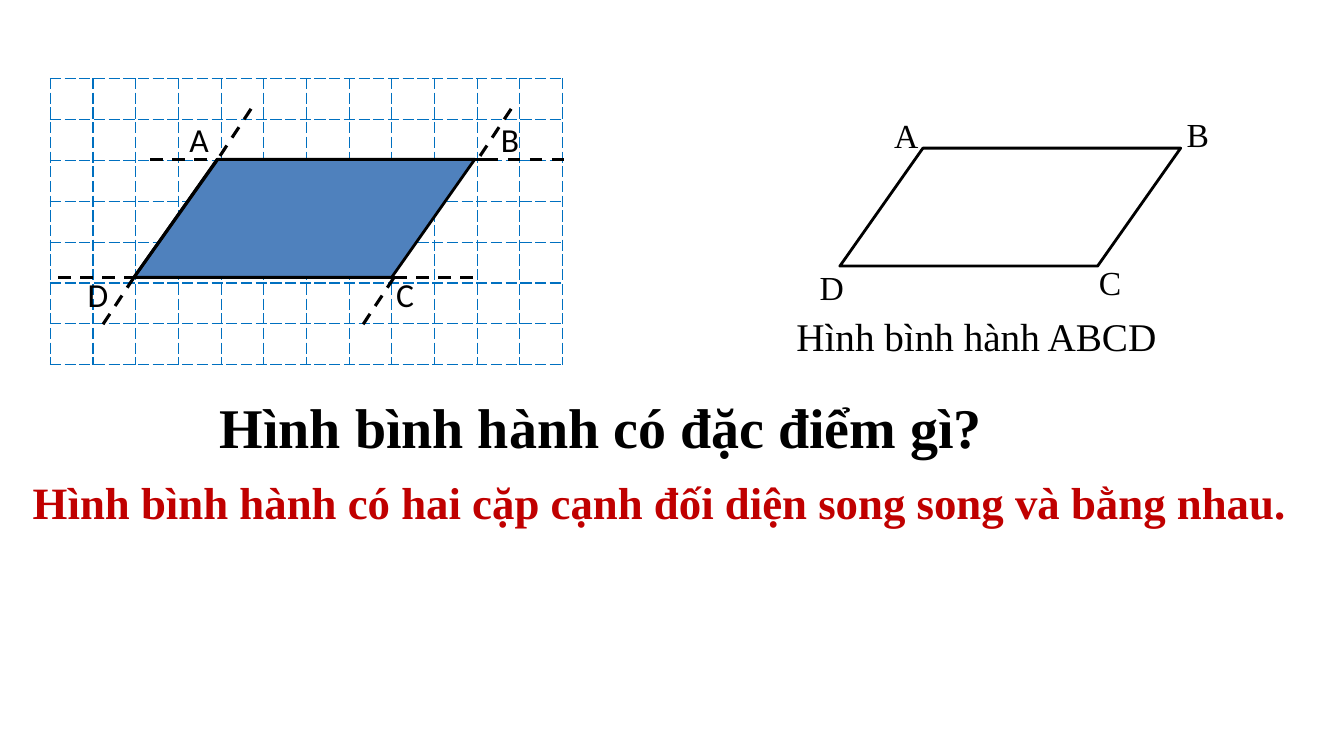
from lxml import etree
from pptx import Presentation
from pptx.dml.color import RGBColor
from pptx.enum.dml import MSO_LINE
from pptx.enum.shapes import MSO_CONNECTOR, MSO_SHAPE
from pptx.enum.text import MSO_ANCHOR, PP_ALIGN
from pptx.oxml.ns import qn
from pptx.util import Inches, Pt

DASH = MSO_LINE.DASH
STRAIGHT = MSO_CONNECTOR.STRAIGHT
PARALLELOGRAM = MSO_SHAPE.PARALLELOGRAM
TOP = MSO_ANCHOR.TOP
LEFT, CENTER = PP_ALIGN.LEFT, PP_ALIGN.CENTER
TITLE_ONLY = 5
COLORS = {"ink": "000000", "paper": "FFFFFF", "grid": "0070C0",
          "figure": "4F81BD", "answer": "C00000"}
SERIF, SANS = "Times New Roman", "Calibri"
COLUMNS, ROWS = 12, 7
SIDE_WIDTH, SIDE_HEIGHT, SKEW = 3.38, 1.17, 0.83


def write(box, text, size, font=SERIF, color="ink", bold=False, align=LEFT):
    frame = box.text_frame
    frame.word_wrap = True
    frame.vertical_anchor = TOP
    frame.text = text
    para = frame.paragraphs[0]
    para.alignment = align
    para.line_spacing = 1.0
    para.space_before = Pt(0)
    para.font.size = Pt(size)
    para.font.name = font
    para.font.bold = bold
    para.font.color.rgb = RGBColor.from_string(COLORS[color])


def draw_line(start, end, dashed):
    points = [Inches(value) for value in (*start, *end)]
    line = page.shapes.add_connector(STRAIGHT, *points)
    line.line.color.rgb = RGBColor.from_string(COLORS["ink"])
    line.line.width = Pt(2.25)
    if dashed:
        line.line.dash_style = DASH
    etree.SubElement(line._element.spPr, qn("a:effectLst"))


deck = Presentation()
deck.slide_width, deck.slide_height = Inches(13.33), Inches(7.5)
page = deck.slides.add_slide(deck.slide_layouts[TITLE_ONLY])

grid = page.shapes.add_table(ROWS, COLUMNS, Inches(0.5), Inches(0.78),
                             Inches(5.08), Inches(2.8)).table
grid.first_row = grid.horz_banding = False
for cell in grid.iter_cells():
    properties = cell._tc.get_or_add_tcPr()
    for side in ("lnL", "lnR", "lnT", "lnB"):
        border = etree.SubElement(properties, qn(f"a:{side}"), w=str(Pt(1)))
        paint = etree.SubElement(border, qn("a:solidFill"))
        etree.SubElement(paint, qn("a:srgbClr"), val=COLORS["grid"])
        etree.SubElement(border, qn("a:prstDash"), val="sysDash")
    cell.fill.solid()
    cell.fill.fore_color.rgb = RGBColor.from_string(COLORS["paper"])

for left, top, fill in ((1.33, 1.58, "figure"), (8.33, 1.47, None)):
    figure = page.shapes.add_shape(PARALLELOGRAM, Inches(left), Inches(top),
                                   Inches(SIDE_WIDTH), Inches(SIDE_HEIGHT))
    figure.adjustments[0] = 0.704
    figure.shadow.inherit = False
    figure.line.color.rgb = RGBColor.from_string(COLORS["ink"])
    figure.line.width = Pt(2)
    if fill:
        figure.fill.solid()
        figure.fill.fore_color.rgb = RGBColor.from_string(COLORS[fill])
    else:
        figure.fill.background()

for corner_x, y, shift in ((1.33 + SKEW, 1.58, 0.08), (1.33, 2.75, 0)):
    end_x = corner_x + 2.58
    draw_line((corner_x + shift, y), (end_x + shift, y), False)
    draw_line((end_x + shift, y), (end_x + shift + 0.83, y), True)
    draw_line((corner_x - 0.75 + shift, y - 0), (corner_x + 0.08 + shift, y), True)

draw_line((1.33 + SKEW, 1.58), (1.33, 2.75), False)
for x in (1.33, 3.91):
    draw_line((x + SKEW + 0.33, 1.08), (x + SKEW, 1.58), True)
    draw_line((x, 2.75), (x - 0.33, 3.25), True)

corner_labels = {
    SANS: {"A": (1.78, 1.13), "B": (4.87, 1.13), "C": (3.83, 2.67), "D": (0.77, 2.67)},
    SERIF: {"A": (8.77, 1.09), "B": (11.67, 1.08), "C": (10.8, 2.55), "D": (8.03, 2.6)},
}
for font, labels in corner_labels.items():
    for letter, (left, top) in labels.items():
        label = page.shapes.add_textbox(Inches(left), Inches(top), Inches(0.33), Inches(0.5))
        write(label, letter, 24, font)

caption = page.shapes.add_textbox(Inches(7.8), Inches(3.05), Inches(4.03), Inches(0.57))
write(caption, "Hình bình hành ABCD", 28)

question = page.shapes.title
question.left, question.top = Inches(2.08), Inches(3.84)
question.width, question.height = Inches(8.55), Inches(0.75)
write(question, "Hình bình hành có đặc điểm gì?", 40, bold=True)

answer = page.shapes.add_textbox(Inches(0.17), Inches(4.66), Inches(12.75), Inches(0.64))
write(answer, "Hình bình hành có hai cặp cạnh đối diện song song và bằng nhau.",
      32, color="answer", bold=True, align=CENTER)

deck.save("out.pptx")
